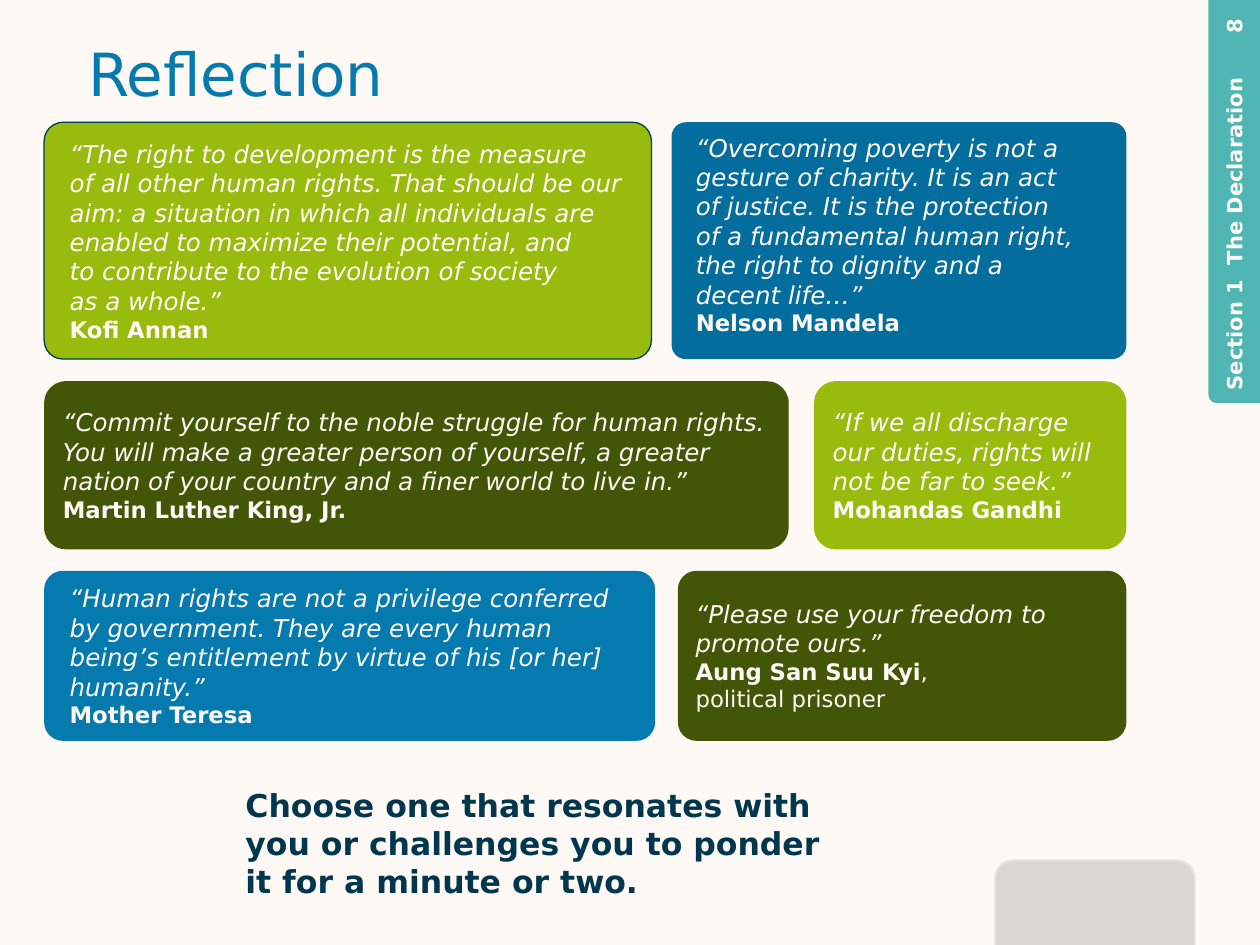
from collections import namedtuple
from dataclasses import dataclass

from lxml.etree import SubElement
from pptx import Presentation
from pptx.dml.color import RGBColor
from pptx.enum.shapes import MSO_SHAPE
from pptx.enum.text import MSO_ANCHOR, MSO_AUTO_SIZE, PP_ALIGN
from pptx.oxml.ns import qn
from pptx.util import Inches, Pt


@dataclass(frozen=True)
class Theme:
    font: str = "DejaVu Sans"
    paper: str = "FFF9F6"
    lime: str = "98BB0E"
    olive: str = "435608"
    blue: str = "047AAE"
    deep_blue: str = "036E9D"
    teal: str = "50B6B3"
    navy: str = "01374E"
    outline: str = "003F47"
    black: str = "000000"
    title: int = 34
    prompt: int = 18
    quote: int = 14
    author: int = 13
    tab: int = 12


T = Theme()
Box = namedtuple("Box", "x y w h")  # in grid units
Card = namedtuple("Card", "fill radius pad quote author note line anchor",
                  defaults=("", None, MSO_ANCHOR.MIDDLE))
COLS, ROWS = 100, 75
WIDE, NARROW = 1.6, 1  # side padding of the cards


def grid(n):
    """Length of n grid units; the slide is 100 columns by 75 rows."""
    return Inches(n / 10)


def place(box):
    return [grid(n) for n in box]


def rgb(color):
    return RGBColor.from_string(color)


def add_text(p, text, size, color=T.paper, bold=False, italic=False):
    for i, line in enumerate(text.split("\n")):
        if i:
            p.add_line_break()
        r = p.add_run()
        r.text = line
        f = r.font
        f.name, f.size, f.bold, f.italic = T.font, Pt(size), bold, italic
        f.color.rgb = rgb(color)


def add_panel(slide, box, kind, fill, radius=None, line=None, alpha=None):
    sp = slide.shapes.add_shape(kind, *place(box))
    sp.shadow.inherit = False
    sp.fill.solid()
    sp.fill.fore_color.rgb = rgb(fill)
    if radius is not None:
        sp.adjustments[0] = radius
    if line:
        sp.line.color.rgb = rgb(line)
        sp.line.width = Pt(0.75)
    else:
        sp.line.fill.background()
    if alpha is not None:
        clr = sp.fill._xPr.find(".//" + qn("a:srgbClr"))
        SubElement(clr, qn("a:alpha")).set("val", str(alpha * 1000))
    return sp


def add_label(slide, box, text, size, color=T.paper, bold=True,
              align=PP_ALIGN.LEFT, turn=0):
    sp = slide.shapes.add_textbox(*place(box))
    sp.rotation = turn
    tf = sp.text_frame
    tf.word_wrap = True
    tf.auto_size = MSO_AUTO_SIZE.SHAPE_TO_FIT_TEXT
    p = tf.paragraphs[0]
    p.alignment = align
    add_text(p, text, size, color, bold)
    return sp


def draw_corner(slide, box):
    """Faint panel running off the bottom edge, with a soft rim."""
    rim = 0.15
    inner = Box(box.x + rim, box.y + rim, box.w - 2 * rim, box.h - rim)
    for part, alpha in ((inner, 5), (box, 9)):
        add_panel(slide, part, MSO_SHAPE.ROUNDED_RECTANGLE, T.black, 0.15, alpha=alpha)


def draw_section_tab(slide, box, section, number):
    """Side tab whose text reads upward."""
    tab = add_panel(slide, box, MSO_SHAPE.ROUND_1_RECTANGLE, T.teal)
    tab.rotation = 180
    mid = box.x + box.w / 2
    for text, center, length, align in ((section, 17.7, 28.5, PP_ALIGN.LEFT),
                                        (number, 3.8, 6.5, PP_ALIGN.RIGHT)):
        label = Box(mid - length / 2, box.y + center - 1.5, length, 3)
        add_label(slide, label, text, T.tab, align=align, turn=270)


def draw_title(slide, box, text):
    tf = add_label(slide, box, text, T.title, T.blue, bold=False).text_frame
    tf.auto_size = MSO_AUTO_SIZE.NONE
    tf.vertical_anchor = MSO_ANCHOR.MIDDLE
    tf.margin_left = tf.margin_right = tf.margin_top = tf.margin_bottom = 0


def draw_card(slide, box, card):
    sp = add_panel(slide, box, MSO_SHAPE.ROUNDED_RECTANGLE, card.fill,
                   card.radius, card.line)
    tf = sp.text_frame
    tf.word_wrap = True
    tf.vertical_anchor = card.anchor
    tf.margin_left = tf.margin_right = grid(card.pad)
    tf.margin_top = tf.margin_bottom = grid(0.5)
    quote, credit = tf.paragraphs[0], tf.add_paragraph()
    quote.alignment = credit.alignment = PP_ALIGN.LEFT
    add_text(quote, card.quote, T.quote, italic=True)
    add_text(credit, card.author, T.author, bold=True)
    if card.note:
        add_text(credit, card.note, T.author)


def draw_quotes(slide, box, rows):
    """Rows of two cards; each row gives its top, height, first width and gap."""
    for top, height, first, gap, left, right in rows:
        y = box.y + top
        draw_card(slide, Box(box.x, y, first, height), left)
        x = first + gap
        draw_card(slide, Box(box.x + x, y, box.w - x, height), right)


QUOTE_ROWS = [
    (0, 18.8, 48.2, 1.6,
     Card(T.lime, 0.08, WIDE,
          "“The right to development is the measure \nof all other human rights. "
          "That should be our aim: a situation in which all individuals are enabled "
          "to maximize their potential, and \nto contribute to the evolution of "
          "society \nas a whole.”", "Kofi Annan", line=T.outline),
     Card(T.deep_blue, 0.06, WIDE,
          "“Overcoming poverty is not a gesture of charity. It is an act \nof justice. "
          "It is the protection \nof a fundamental human right, the right to dignity "
          "and a \ndecent life…”", "Nelson Mandela", anchor=MSO_ANCHOR.TOP)),
    (20.55, 13.35, 59.1, 2,
     Card(T.olive, 0.13, NARROW,
          "“Commit yourself to the noble struggle for human rights. You will make a "
          "greater person of yourself, a greater nation of your country and a finer "
          "world to live in.”", "Martin Luther King, Jr."),
     Card(T.lime, 0.13, NARROW,
          "“If we all discharge our duties, rights will not be far to seek.”",
          "Mohandas Gandhi")),
    (35.6, 13.5, 48.5, 1.8,
     Card(T.blue, 0.11, WIDE,
          "“Human rights are not a privilege conferred by government. They are every "
          "human being’s entitlement by virtue of his [or her] humanity.”",
          "Mother Teresa"),
     Card(T.olive, 0.11, NARROW, "“Please use your freedom to promote ours.”",
          "Aung San Suu Kyi", ", \npolitical prisoner")),
]


def main():
    prs = Presentation()
    prs.slide_width, prs.slide_height = grid(COLS), grid(ROWS)
    slide = prs.slides.add_slide(prs.slide_layouts[6])
    bg = slide.background.fill
    bg.solid()
    bg.fore_color.rgb = rgb(T.paper)

    draw_corner(slide, Box(78.9, 68.2, 16, 10))
    draw_section_tab(slide, Box(95.9, 0, 4.1, 32), "Section 1  The Declaration", "8")
    draw_title(slide, Box(7, 0, 85.9, 11.5), "Reflection")
    draw_quotes(slide, Box(3.5, 9.7, 85.9, 49.1), QUOTE_ROWS)
    # Closing prompt
    add_label(slide, Box(18.5, 61.9, 50, 10.1),
              "Choose one that resonates with you or challenges you to ponder "
              "it for a minute or two.", T.prompt, T.navy)
    prs.save("out.pptx")


if __name__ == "__main__":
    main()
